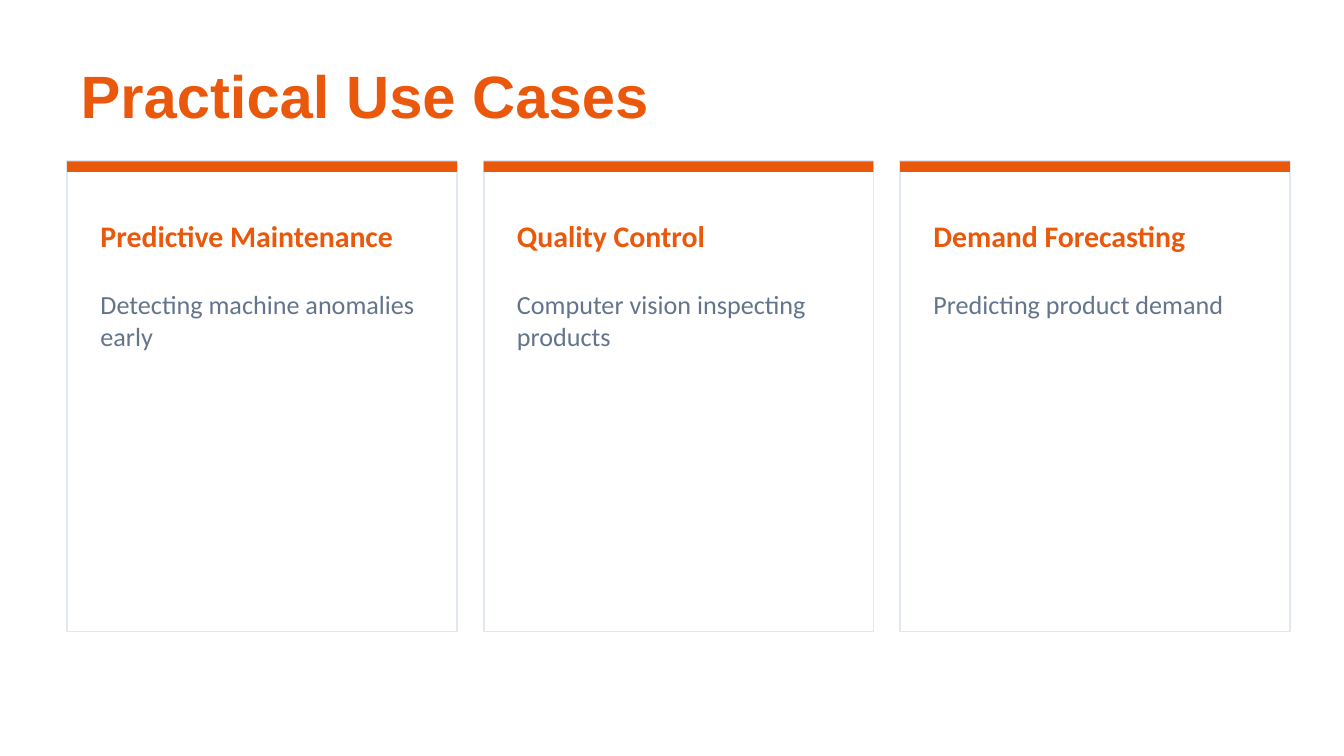
from dataclasses import dataclass

from pptx import Presentation
from pptx.dml.color import RGBColor as RGB
from pptx.enum.shapes import MSO_SHAPE as Shape
from pptx.enum.text import MSO_ANCHOR as Anchor, MSO_AUTO_SIZE as Fit, PP_ALIGN as Align
from pptx.util import Cm, Pt


@dataclass
class Theme:
    white: RGB = RGB.from_string("FFFFFF")
    accent: RGB = RGB.from_string("EA580C")
    border: RGB = RGB.from_string("E2E8F0")
    muted: RGB = RGB.from_string("64748B")
    title: Pt = Pt(32)
    head: Pt = Pt(16)
    body: Pt = Pt(14)


theme = Theme()


def write(box, text, size, color, font="Calibri", bold=False, anchor=Anchor.MIDDLE):
    frame = box.text_frame
    frame.text = text
    frame.word_wrap = True
    frame.auto_size = Fit.NONE
    frame.vertical_anchor = anchor
    line = frame.paragraphs[0]
    line.alignment = Align.LEFT
    style = line.runs[0].font
    style.name, style.size, style.bold = font, size, bold
    style.color.rgb = color


def block(left, top, width, height, color):
    shape = slide.shapes.add_shape(Shape.RECTANGLE, left, top, width, height)
    shape.shadow.inherit = False
    shape.fill.solid()
    shape.fill.fore_color.rgb = color
    shape.line.fill.background()
    return shape


deck = Presentation()
deck.slide_width, deck.slide_height = Cm(25.4), Cm(14.29)
slide = deck.slides.add_slide(deck.slide_layouts[5])
slide.background.fill.solid()
slide.background.fill.fore_color.rgb = theme.white

# Title
title = slide.shapes.title
title.left, title.top, title.width, title.height = Cm(1.27), Cm(1.02), Cm(22.86), Cm(1.52)
write(title, "Practical Use Cases", theme.title, theme.accent, "Arial", True)

# Three equal cards
cases = [
    ("Predictive Maintenance", "Detecting machine anomalies early"),
    ("Quality Control", "Computer vision inspecting products"),
    ("Demand Forecasting", "Predicting product demand"),
]
left, top, width, gap, inset = Cm(1.27), Cm(3.05), Cm(7.37), Cm(0.5), Cm(0.38)

for i, (head, body) in enumerate(cases):
    x = left + i * (width + gap)

    # Card and its top bar
    card = block(x, top, width, Cm(8.89), theme.white)
    card.line.color.rgb = theme.border
    card.line.width = Pt(1)
    block(x, top, width, Cm(0.2), theme.accent)

    # Heading and description
    inner = width - 2 * inset
    box = slide.shapes.add_textbox(x + inset, Cm(3.81), inner, Cm(1.27))
    write(box, head, theme.head, theme.accent, bold=True)
    box = slide.shapes.add_textbox(x + inset, Cm(5.33), inner, Cm(6.1))
    write(box, body, theme.body, theme.muted, anchor=Anchor.TOP)

deck.save("out.pptx")
